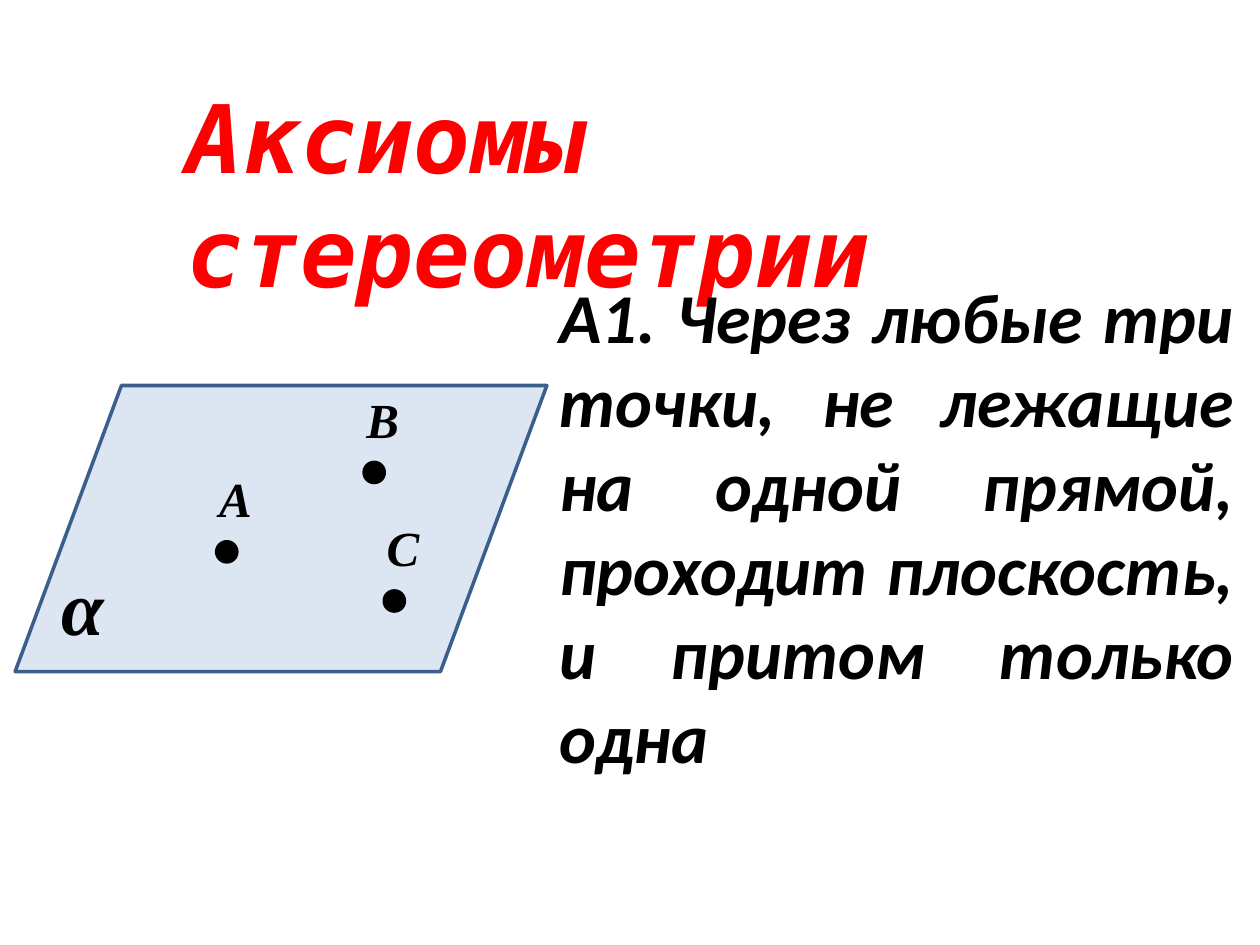
from dataclasses import dataclass

from pptx import Presentation
from pptx.dml.color import RGBColor
from pptx.enum.shapes import MSO_SHAPE
from pptx.enum.text import MSO_AUTO_SIZE, PP_ALIGN
from pptx.slide import Slide
from pptx.util import Pt

PX = 9144  # EMU per px, 100 px to the inch

RED = RGBColor(0xFF, 0x00, 0x00)
BLACK = RGBColor(0x00, 0x00, 0x00)
PLANE_FILL = RGBColor(0xDC, 0xE6, 0xF2)
PLANE_LINE = RGBColor(0x3A, 0x5F, 0x8C)

PARALLELOGRAM = MSO_SHAPE.FLOWCHART_DATA
DOT = MSO_SHAPE.FLOWCHART_CONNECTOR
GROW = MSO_AUTO_SIZE.SHAPE_TO_FIT_TEXT
LEFT = PP_ALIGN.LEFT
JUSTIFY = PP_ALIGN.JUSTIFY

DOT_SIZE = 16
LABEL_WIDTH, LABEL_HEIGHT = 46, 57
LABEL_OFFSET_X, LABEL_OFFSET_Y = -8, -63


@dataclass(frozen=True)
class Box:
    left: int
    top: int
    width: int
    height: int

    def emu(self) -> tuple[int, int, int, int]:
        return self.left * PX, self.top * PX, self.width * PX, self.height * PX


@dataclass(frozen=True)
class TextStyle:
    font: str
    size: int
    color: RGBColor = BLACK
    alignment: PP_ALIGN = LEFT
    wrap: bool = True


@dataclass(frozen=True)
class PlanePoint:
    name: str
    left: int
    top: int


TITLE = TextStyle("DejaVu Sans Mono", 54, RED)
AXIOM = TextStyle("Calibri", 40, alignment=JUSTIFY)
PLANE_NAME = TextStyle("Times New Roman", 44, wrap=False)
POINT_NAME = TextStyle("Times New Roman", 28, wrap=False)

POINTS = [
    PlanePoint("А", 172, 430),
    PlanePoint("В", 289, 367),
    PlanePoint("С", 305, 469),
]


def add_figure(slide: Slide, kind: MSO_SHAPE, box: Box, fill: RGBColor, line: RGBColor) -> None:
    shape = slide.shapes.add_shape(kind, *box.emu())
    shape.shadow.inherit = False
    shape.fill.solid()
    shape.fill.fore_color.rgb = fill
    shape.line.color.rgb = line
    shape.line.width = Pt(2)


def add_text(slide: Slide, text: str, box: Box, style: TextStyle) -> None:
    frame = slide.shapes.add_textbox(*box.emu()).text_frame
    frame.word_wrap = style.wrap
    frame.auto_size = GROW
    paragraph = frame.paragraphs[0]
    paragraph.text = text
    paragraph.alignment = style.alignment
    font = paragraph.font
    font.name = style.font
    font.size = Pt(style.size)
    font.bold = True
    font.italic = True
    font.color.rgb = style.color


def add_point(slide: Slide, point: PlanePoint) -> None:
    """Draw a dot with its letter above it."""
    add_figure(slide, DOT, Box(point.left, point.top, DOT_SIZE, DOT_SIZE), BLACK, BLACK)
    label = Box(
        point.left + LABEL_OFFSET_X, point.top + LABEL_OFFSET_Y, LABEL_WIDTH, LABEL_HEIGHT
    )
    add_text(slide, point.name, label, POINT_NAME)


def main() -> None:
    presentation = Presentation()
    presentation.slide_width = 1000 * PX
    presentation.slide_height = 750 * PX
    slide = presentation.slides.add_slide(presentation.slide_layouts[6])

    add_figure(slide, PARALLELOGRAM, Box(12, 306, 422, 227), PLANE_FILL, PLANE_LINE)
    add_text(slide, "Аксиомы стереометрии", Box(138, 58, 721, 101), TITLE)
    add_text(
        slide,
        "А1. Через любые три точки, не лежащие на одной прямой, "
        "проходит плоскость, и притом только одна",
        Box(434, 212, 555, 414),
        AXIOM,
    )
    add_text(slide, "α", Box(39, 438, 59, 84), PLANE_NAME)
    for point in POINTS:
        add_point(slide, point)

    presentation.save("out.pptx")


if __name__ == "__main__":
    main()
